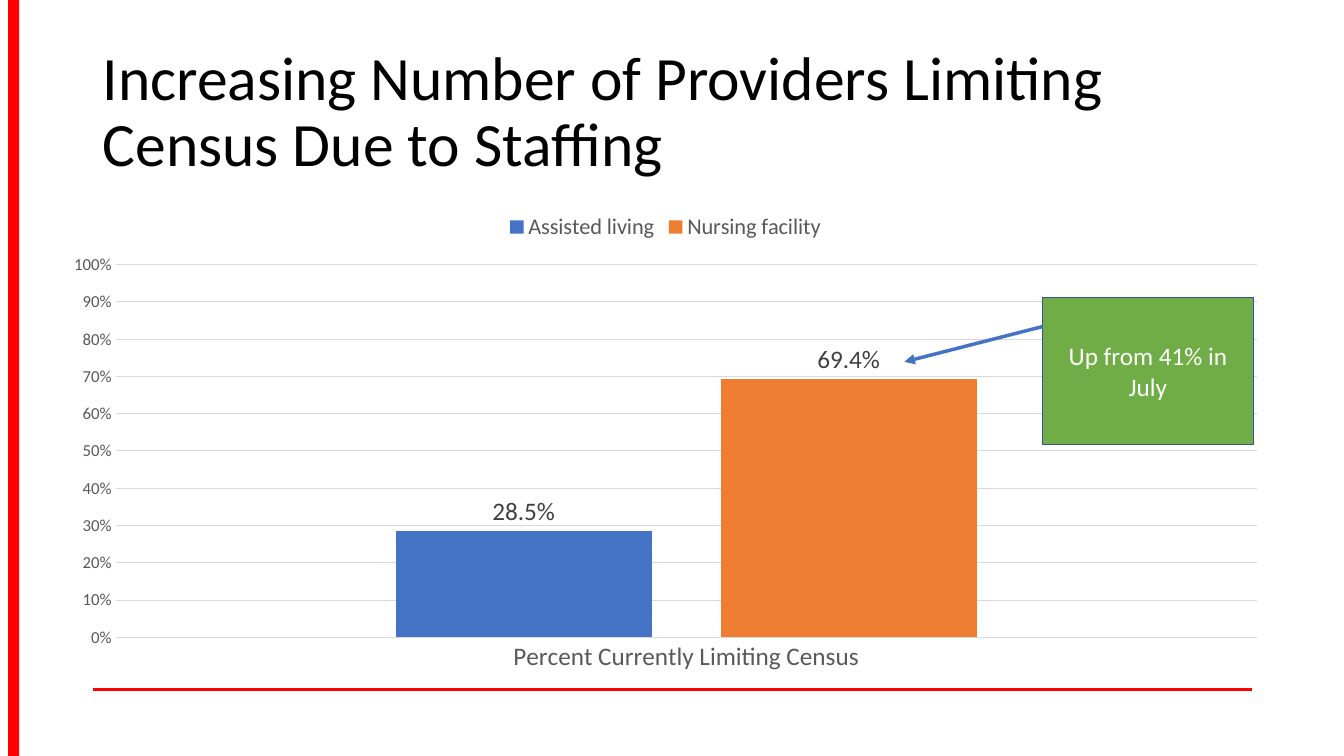
from pptx import Presentation
from pptx.chart.data import CategoryChartData
from pptx.dml.color import RGBColor
from pptx.enum.chart import XL_CHART_TYPE, XL_LABEL_POSITION, XL_LEGEND_POSITION, XL_TICK_MARK
from pptx.enum.shapes import MSO_CONNECTOR, MSO_SHAPE
from pptx.enum.text import MSO_ANCHOR, PP_ALIGN
from pptx.oxml.ns import qn
from pptx.util import Inches, Pt
from lxml.etree import SubElement


def paint(color, code):
    color.rgb = RGBColor.from_string(code)


def style(font, size, code):
    font.name = "Calibri"
    font.size = Pt(size)
    paint(font.color, code)


prs = Presentation()
prs.slide_width = Inches(13.33)
prs.slide_height = Inches(7.5)
slide = prs.slides.add_slide(prs.slide_layouts[6])
shapes = slide.shapes

# Red side bar
bar = shapes.add_shape(MSO_SHAPE.RECTANGLE, Inches(0.08), 0, Inches(0.11), Inches(7.5))
bar.shadow.inherit = False
bar.fill.solid()
paint(bar.fill.fore_color, "FF0000")
bar.line.fill.background()

# Title
title = shapes.add_textbox(Inches(0.92), Inches(0.4), Inches(11.5), Inches(1.45))
frame = title.text_frame
frame.word_wrap = True
frame.vertical_anchor = MSO_ANCHOR.MIDDLE
para = frame.paragraphs[0]
para.line_spacing = 0.9
run = para.add_run()
run.text = "Increasing Number of Providers Limiting Census Due to Staffing"
style(run.font, 44, "000000")

# Chart
data = CategoryChartData()
data.categories = ["Percent Currently Limiting Census"]
data.add_series("Assisted living", [0.285])
data.add_series("Nursing facility", [0.694])
chart = shapes.add_chart(XL_CHART_TYPE.COLUMN_CLUSTERED, Inches(0.49), Inches(2),
                         Inches(12.22), Inches(4.76), data).chart
style(chart.font, 10, "000000")
chart.has_title = False
chart.has_legend = True
chart.legend.position = XL_LEGEND_POSITION.TOP
chart.legend.include_in_layout = False
style(chart.legend.font, 16, "595959")

# Columns and their labels
plot = chart.plots[0]
plot.gap_width = 219
plot.overlap = -27
plot.vary_by_categories = False
for series, code in zip(plot.series, ["4472C4", "ED7D31"]):
    series.format.fill.solid()
    paint(series.format.fill.fore_color, code)
    labels = series.data_labels
    labels.show_value = True
    labels.number_format = "0.0%"
    labels.number_format_is_linked = False
    labels.position = XL_LABEL_POSITION.OUTSIDE_END
    style(labels.font, 18, "404040")

# Axes
cat, val = chart.category_axis, chart.value_axis
for axis, size in [(cat, 18), (val, 12)]:
    axis.major_tick_mark = axis.minor_tick_mark = XL_TICK_MARK.NONE
    style(axis.tick_labels.font, size, "595959")
val.minimum_scale = 0
val.maximum_scale = 1
val.major_unit = 0.1
val.tick_labels.number_format = "0%"
val.tick_labels.number_format_is_linked = False
val.format.line.fill.background()
val.has_major_gridlines = True
for line in [cat.format.line, val.major_gridlines.format.line]:
    paint(line.color, "D9D9D9")
    line.width = Pt(0.75)

# Callout box
box = shapes.add_shape(MSO_SHAPE.RECTANGLE, Inches(10.34), Inches(2.95),
                       Inches(2.09), Inches(1.46))
box.shadow.inherit = False
box.fill.solid()
paint(box.fill.fore_color, "70AD47")
paint(box.line.color, "325491")
box.line.width = Pt(1)
frame = box.text_frame
frame.word_wrap = True
frame.vertical_anchor = MSO_ANCHOR.MIDDLE
para = frame.paragraphs[0]
para.alignment = PP_ALIGN.CENTER
run = para.add_run()
run.text = "Up from 41% in July"
style(run.font, 18, "FFFFFF")

# Footer rule and callout arrow
for x1, y1, x2, y2, code, width, head in [
    (0.92, 6.84, 12.42, 6.84, "FF0000", 2, False),
    (10.34, 3.24, 8.97, 3.59, "4472C4", 2.5, True),
]:
    link = shapes.add_connector(MSO_CONNECTOR.STRAIGHT, Inches(x1), Inches(y1),
                                Inches(x2), Inches(y2))
    paint(link.line.color, code)
    link.line.width = Pt(width)
    props = link._element.spPr
    if head:
        SubElement(props.find(qn("a:ln")), qn("a:tailEnd"), type="triangle")
    SubElement(props, qn("a:effectLst"))

prs.save("out.pptx")
